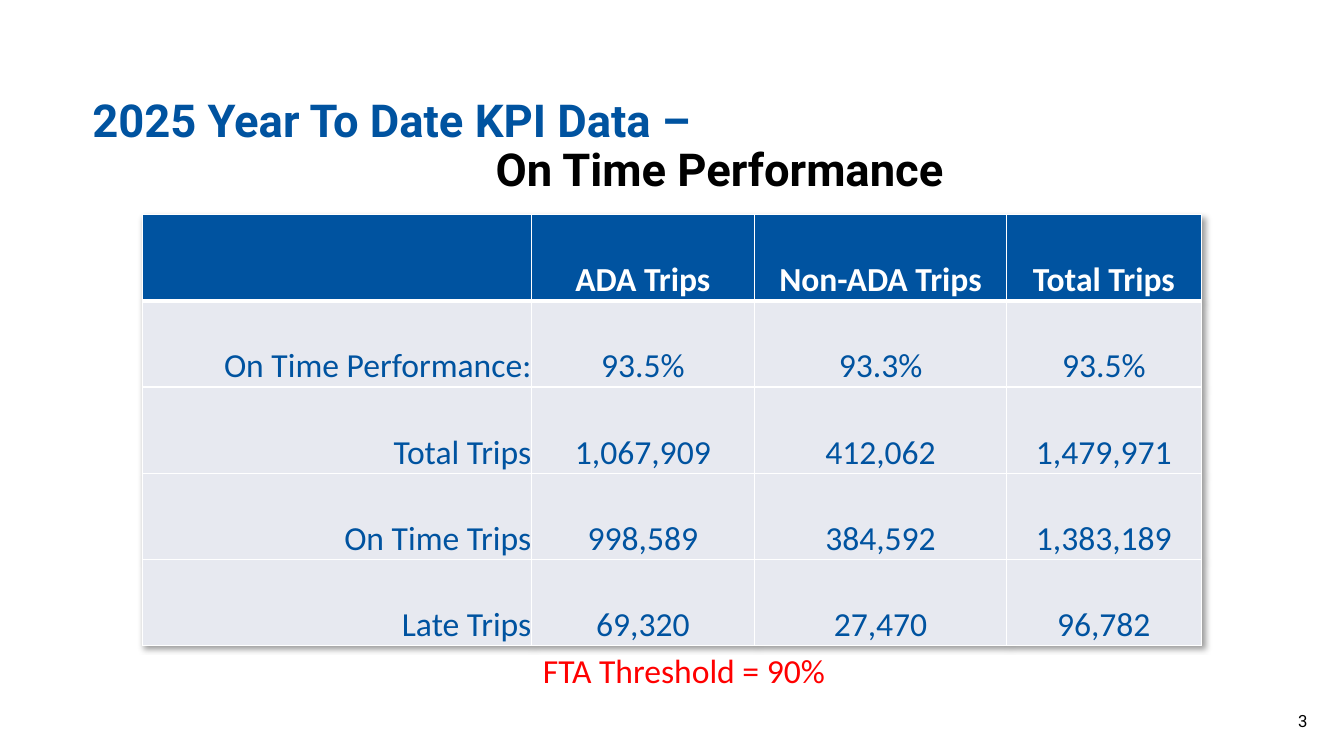
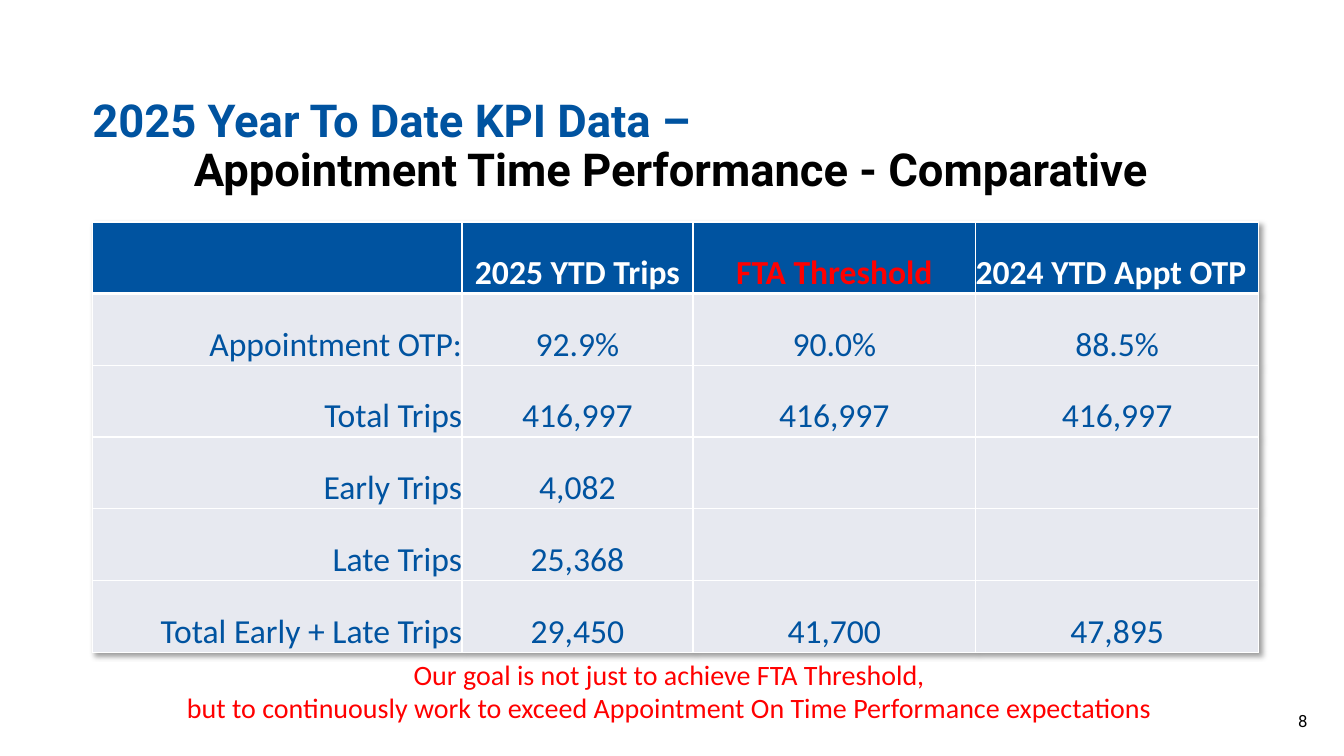
from dataclasses import dataclass
from typing import NamedTuple

from lxml.etree import SubElement
from pptx import Presentation
from pptx.dml.color import RGBColor
from pptx.enum.text import MSO_ANCHOR, MSO_AUTO_SIZE, PP_ALIGN
from pptx.oxml import parse_xml
from pptx.oxml.ns import nsdecls, qn
from pptx.util import Pt

BLUE = "0053A0"
RED = "FF0000"
BLACK = "000000"
WHITE = "FFFFFF"
PALE = "E7E9F0"
TITLE_FONT = "Roboto"
TABLE_FONT = "Calibri"
TITLE_LINE = "2025 Year To Date KPI Data –"
TITLE_LEFT = 66
TITLE_WIDTH = 833
TABLE_HEIGHT = 307.5


class Box(NamedTuple):
    """A position and size in points."""

    left: float
    top: float
    width: float
    height: float


class Heading(NamedTuple):
    """A column heading with its width in points."""

    text: str
    width: float
    color: str = WHITE
    align: PP_ALIGN = PP_ALIGN.CENTER


@dataclass(frozen=True)
class Page:
    """The content of one KPI page."""

    number: str
    subtitle: str
    indent: float
    table_left: float
    table_top: float
    headings: tuple[Heading, ...]
    rows: tuple[tuple[str, ...], ...]
    note: tuple[str, ...]
    note_box: Box
    note_size: float


PAGES = (
    Page(
        number="3",
        subtitle="On Time Performance",
        indent=288,
        table_left=101.5,
        table_top=153.5,
        headings=(
            Heading("", 278),
            Heading("ADA Trips", 159.5),
            Heading("Non-ADA Trips", 180),
            Heading("Total Trips", 139),
        ),
        rows=(
            ("On Time Performance:", "93.5%", "93.3%", "93.5%"),
            ("Total Trips", "1,067,909", "412,062", "1,479,971"),
            ("On Time Trips", "998,589", "384,592", "1,383,189"),
            ("Late Trips", "69,320", "27,470", "96,782"),
        ),
        note=("FTA Threshold = 90%",),
        note_box=Box(152.5, 461, 672, 36),
        note_size=24,
    ),
    Page(
        number="8",
        subtitle="Appointment Time Performance - Comparative",
        indent=72.5,
        table_left=TITLE_LEFT,
        table_top=158.5,
        headings=(
            Heading("", 264),
            Heading("2025 YTD Trips", 165),
            Heading("FTA Threshold", 202, RED),
            Heading("2024 YTD Appt OTP", 202, WHITE, PP_ALIGN.LEFT),
        ),
        rows=(
            ("Appointment OTP:", "92.9%", "90.0%", "88.5%"),
            ("Total Trips", "416,997", "416,997", "416,997"),
            ("Early Trips", "4,082", "", ""),
            ("Late Trips", "25,368", "", ""),
            ("Total Early + Late Trips", "29,450", "41,700", "47,895"),
        ),
        note=(
            "Our goal is not just to achieve FTA Threshold,",
            "but to continuously work to exceed Appointment On Time Performance expectations",
        ),
        note_box=Box(114.5, 466, 727, 55.5),
        note_size=20,
    ),
)


def paint(target, color: str) -> None:
    """Give a font or a fill a solid colour."""
    fill = getattr(target, "fill", target)
    fill.solid()
    fill.fore_color.rgb = RGBColor.from_string(color)


def add_span(para, text: str, font: str, size: float, color: str, bold: bool = False) -> None:
    """Append one formatted run to a paragraph."""
    span = para.add_run()
    span.text = text
    span.font.name = font
    span.font.size = Pt(size)
    span.font.bold = bold
    paint(span.font, color)


def set_margins(target, left: float, top: float, right: float, bottom: float) -> None:
    """Set the text margins of a frame or cell in points."""
    target.margin_left, target.margin_top = Pt(left), Pt(top)
    target.margin_right, target.margin_bottom = Pt(right), Pt(bottom)


def add_title(slide, page: Page) -> None:
    """Fill the title placeholder with its two lines."""
    title = slide.shapes.title
    title.left, title.top = Pt(TITLE_LEFT), Pt(48)
    title.width, title.height = Pt(TITLE_WIDTH), Pt(96)
    frame = title.text_frame
    frame.word_wrap = True
    frame.auto_size = MSO_AUTO_SIZE.NONE
    frame.vertical_anchor = MSO_ANCHOR.BOTTOM
    set_margins(frame, 0, 29, 0, 3.6)
    lines = ((TITLE_LINE, BLUE, 0), (page.subtitle, BLACK, page.indent))
    for index, (text, color, indent) in enumerate(lines):
        para = frame.add_paragraph() if index else frame.paragraphs[0]
        para.alignment = PP_ALIGN.LEFT
        para.line_spacing = 0.9
        para.space_before = Pt(0)
        para._p.get_or_add_pPr().set("marL", str(Pt(indent)))
        add_span(para, text, TITLE_FONT, 32.4, color, True)


def add_text(slide, box: Box, lines: tuple[str, ...], font: str, size: float,
             color: str, align: PP_ALIGN):
    """Add a wrapped text box and return its frame."""
    frame = slide.shapes.add_textbox(*map(Pt, box)).text_frame
    frame.word_wrap = True
    for index, text in enumerate(lines):
        para = frame.add_paragraph() if index else frame.paragraphs[0]
        para.alignment = align
        add_span(para, text, font, size, color)
    return frame


def add_borders(cell, top: float, bottom: float) -> None:
    """Draw white borders around a cell."""
    properties = cell._tc.get_or_add_tcPr()
    widths = {"lnL": 1, "lnR": 1, "lnT": top, "lnB": bottom}
    for index, (side, width) in enumerate(widths.items()):
        line = SubElement(properties, qn(f"a:{side}"), w=str(Pt(width)))
        fill = SubElement(line, qn("a:solidFill"))
        SubElement(fill, qn("a:srgbClr"), val=WHITE)
        properties.insert(index, line)


def add_shadow(table) -> None:
    """Cast a soft shadow to the lower right of a table."""
    table._tbl.tblPr.insert(0, parse_xml(
        f'<a:effectLst {nsdecls("a")}>'
        '<a:outerShdw blurRad="50800" dist="38100" dir="2700000" algn="tl" rotWithShape="0">'
        f'<a:srgbClr val="{BLACK}"><a:alpha val="40000"/></a:srgbClr>'
        '</a:outerShdw></a:effectLst>'
    ))


def add_kpi_table(slide, page: Page) -> None:
    """Add the KPI table with its heading row."""
    grid = (tuple(heading.text for heading in page.headings),) + page.rows
    width = sum(heading.width for heading in page.headings)
    box = Box(page.table_left, page.table_top, width, TABLE_HEIGHT)
    table = slide.shapes.add_table(len(grid), len(page.headings), *map(Pt, box)).table
    table.horz_banding = False
    add_shadow(table)
    for column, heading in zip(table.columns, page.headings):
        column.width = Pt(heading.width)
    for row_index, texts in enumerate(grid):
        is_head = row_index == 0
        table.rows[row_index].height = Pt(TABLE_HEIGHT / len(grid))
        for column_index, (text, heading) in enumerate(zip(texts, page.headings)):
            cell = table.cell(row_index, column_index)
            cell.vertical_anchor = MSO_ANCHOR.BOTTOM
            set_margins(cell, 0, 0, 0, 0)
            paint(cell.fill, BLUE if is_head else PALE)
            add_borders(cell, 3 if row_index == 1 else 1, 3 if is_head else 1)
            if not text:
                continue
            para = cell.text_frame.paragraphs[0]
            if is_head:
                para.alignment = heading.align
            else:
                para.alignment = PP_ALIGN.CENTER if column_index else PP_ALIGN.RIGHT
            add_span(para, text, TABLE_FONT, 24, heading.color if is_head else BLUE, is_head)


def add_page(deck, page: Page) -> None:
    """Add one KPI slide to the deck."""
    slide = deck.slides.add_slide(deck.slide_layouts[5])
    add_title(slide, page)
    number = add_text(slide, Box(818.5, 500.5, 115.5, 29), (page.number,),
                      TITLE_FONT, 12, BLACK, PP_ALIGN.RIGHT)
    number.vertical_anchor = MSO_ANCHOR.MIDDLE
    set_margins(number, 7.2, 3.6, 0, 3.6)
    add_kpi_table(slide, page)
    add_text(slide, page.note_box, page.note, TABLE_FONT, page.note_size, RED, PP_ALIGN.CENTER)


def main() -> None:
    """Build and save the deck."""
    deck = Presentation()
    deck.slide_width, deck.slide_height = Pt(960), Pt(540)
    for page in PAGES:
        add_page(deck, page)
    deck.save("out.pptx")


if __name__ == "__main__":
    main()
